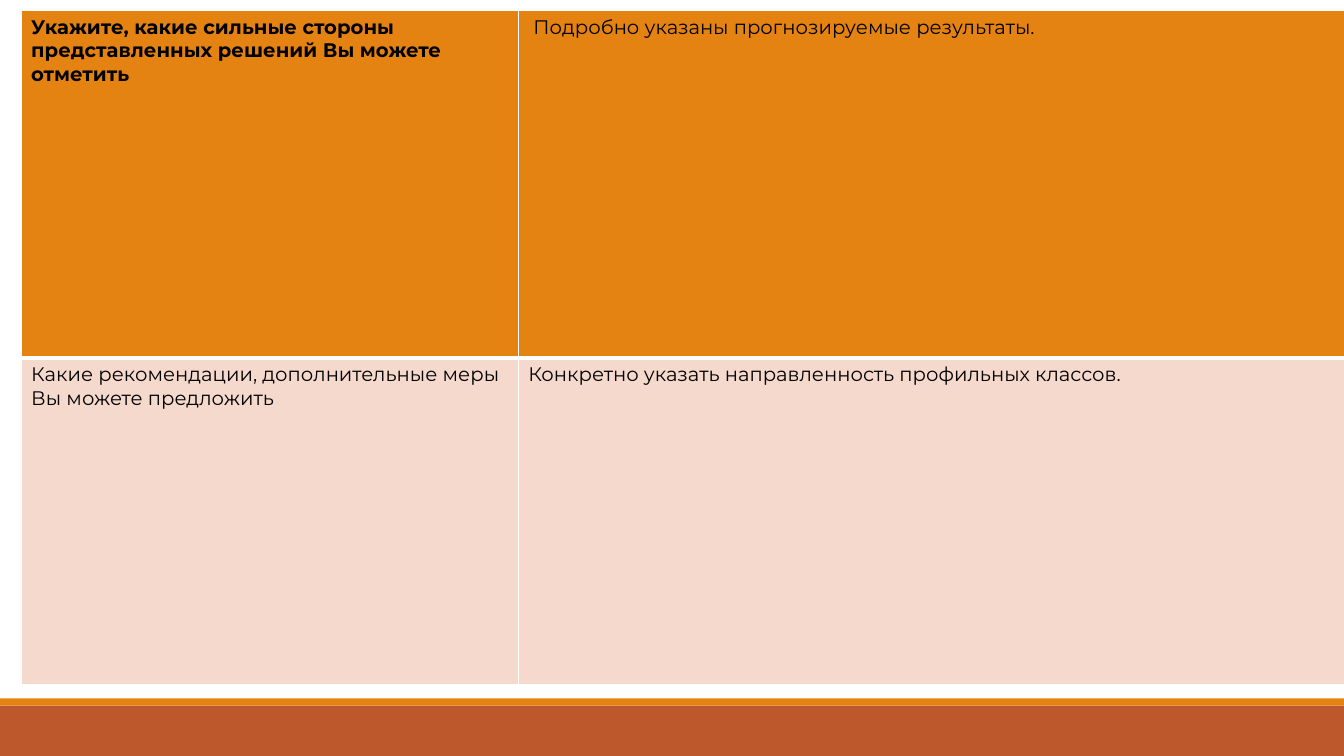
from dataclasses import dataclass

from lxml.etree import SubElement
from pptx import Presentation
from pptx.dml.color import RGBColor
from pptx.enum.shapes import MSO_SHAPE as Preset
from pptx.oxml.ns import qn
from pptx.slide import Slide
from pptx.table import _Cell as Cell
from pptx.util import Inches, Pt

ORANGE = "E48312"
RUST = "BD582C"
PINK = "F5D9CC"
WHITE = "FFFFFF"
BLACK = "000000"


@dataclass
class Band:
    top: float
    height: float
    color: str


@dataclass
class Answer:
    question: str
    reply: str
    height: float
    color: str
    bold_question: bool
    top_rule: float
    bottom_rule: float


FOOTER_BANDS = [Band(7, 0.5, RUST), Band(6.93, 0.07, ORANGE)]
COLUMN_WIDTHS = [4.93, 8.76]
ANSWERS = [
    Answer("Укажите, какие сильные стороны представленных решений Вы можете отметить",
           " Подробно указаны прогнозируемые результаты.", 3.45, ORANGE, True, 1, 3),
    Answer("Какие рекомендации, дополнительные меры Вы можете предложить",
           "Конкретно указать направленность профильных классов.", 3.24, PINK, False, 3, 1),
]


def rgb(color: str) -> RGBColor:
    return RGBColor.from_string(color)


def draw_band(slide: Slide, band: Band) -> None:
    strip = slide.shapes.add_shape(Preset.RECTANGLE, 0, Inches(band.top),
                                   Inches(13.33), Inches(band.height))
    strip.shadow.inherit = False
    strip.fill.solid()
    strip.fill.fore_color.rgb = rgb(band.color)
    strip.line.fill.background()


def rule_cell(cell: Cell, top: float, bottom: float) -> None:
    properties = cell._tc.get_or_add_tcPr()
    for side, width in (("L", 1), ("R", 1), ("T", top), ("B", bottom)):
        rule = SubElement(properties, qn(f"a:ln{side}"), w=str(Pt(width)))
        SubElement(SubElement(rule, qn("a:solidFill")), qn("a:srgbClr"), val=WHITE)


def fill_cell(cell: Cell, text: str, bold: bool, answer: Answer) -> None:
    rule_cell(cell, answer.top_rule, answer.bottom_rule)
    cell.fill.solid()
    cell.fill.fore_color.rgb = rgb(answer.color)
    run = cell.text_frame.paragraphs[0].add_run()
    run.text = text
    run.font.name = "Montserrat"
    run.font.size = Pt(14)
    run.font.bold = bold
    run.font.color.rgb = rgb(BLACK)


def draw_answers(slide: Slide, answers: list[Answer]) -> None:
    table = slide.shapes.add_table(
        len(answers), len(COLUMN_WIDTHS), Inches(0.21), Inches(0.1),
        Inches(sum(COLUMN_WIDTHS)), Inches(sum(answer.height for answer in answers))).table
    for column, width in zip(table.columns, COLUMN_WIDTHS):
        column.width = Inches(width)
    for row, answer in zip(table.rows, answers):
        row.height = Inches(answer.height)
        question_cell, reply_cell = row.cells
        fill_cell(question_cell, answer.question, answer.bold_question, answer)
        fill_cell(reply_cell, answer.reply, False, answer)


def main() -> None:
    deck = Presentation()
    deck.slide_width = Inches(13.33)
    deck.slide_height = Inches(7.5)
    slide = deck.slides.add_slide(deck.slide_layouts[6])
    for band in FOOTER_BANDS:
        draw_band(slide, band)
    draw_answers(slide, ANSWERS)
    deck.save("out.pptx")


if __name__ == "__main__":
    main()
